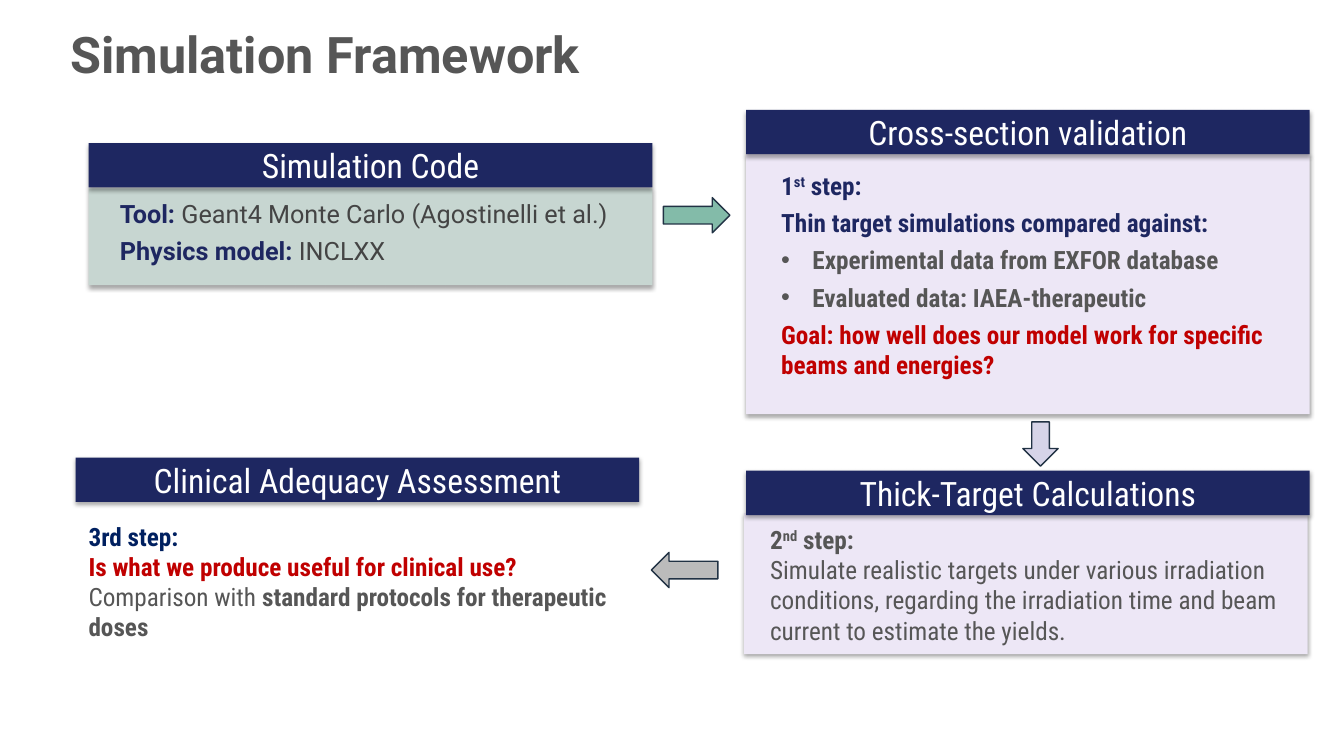
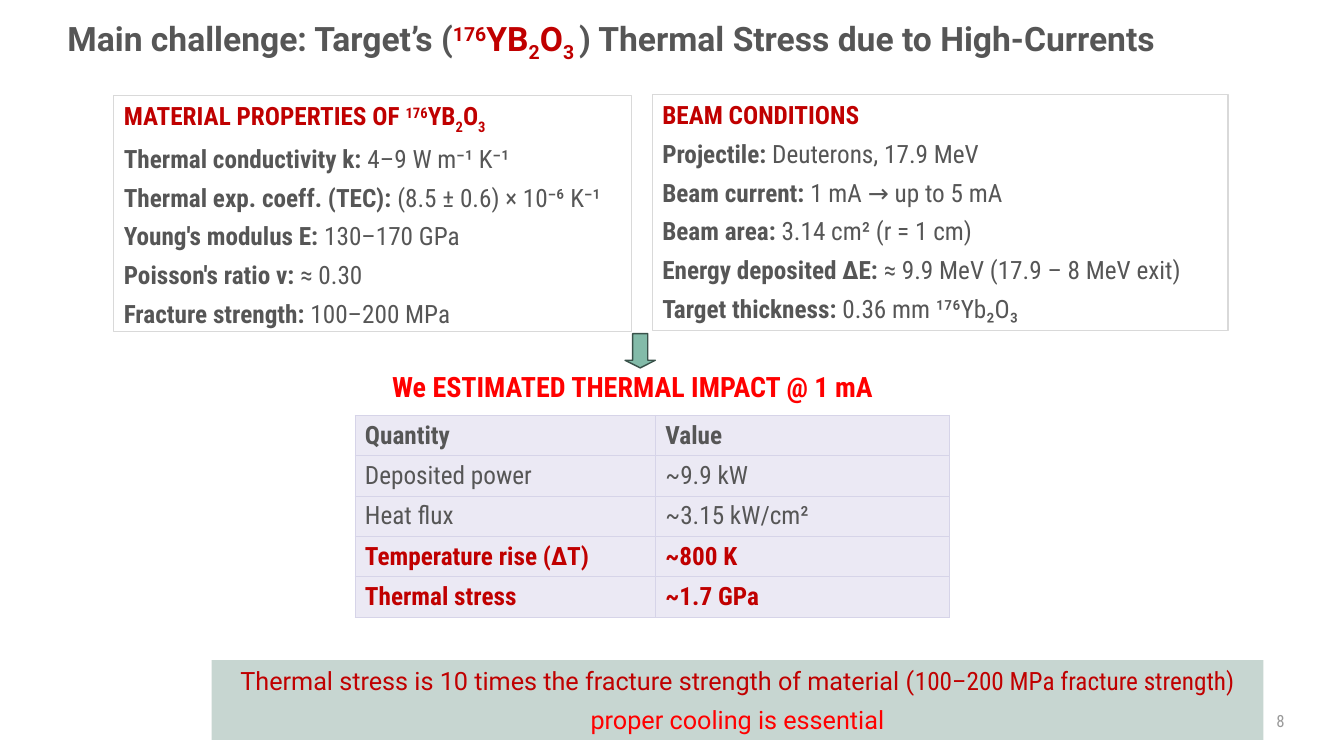
"""Build two slides on a simulation framework and target thermal stress."""
from lxml.etree import SubElement
from pptx import Presentation
from pptx.dml.color import RGBColor
from pptx.enum.shapes import MSO_SHAPE
from pptx.enum.text import MSO_ANCHOR, PP_ALIGN
from pptx.oxml.ns import qn
from pptx.util import Inches, Pt

NAVY, GREY, RED, BRIGHT = "1E2761", "565656", "C00000", "FF0000"
LILAC, SAGE, GREEN, EDGE = "EDE7F6", "C7D6D1", "83BBA9", "D6D4E8"
WIDE, SLIM = "Roboto", "Roboto Condensed"
BOX, RIGHT, DOWN = MSO_SHAPE.RECTANGLE, MSO_SHAPE.RIGHT_ARROW, MSO_SHAPE.DOWN_ARROW
TITLE = {"font": WIDE, "bold": True, "mid": True, "lines": 0.9}
BOLD, PLAIN = {"bold": True}, {"bold": False}
SUP, SUB = {"base": 30000}, {"base": -25000}
rgb = RGBColor.from_string


def draw(slide, place, kind=None, fill=None, line=None, width=1, shade=False, turn=0):
    """Add a shape, or a text box when no kind is given."""
    place = [Inches(n) for n in place]
    if kind is None:
        return slide.shapes.add_textbox(*place)
    shape = slide.shapes.add_shape(kind, *place)
    shape.rotation = turn
    if fill:
        shape.fill.solid()
        shape.fill.fore_color.rgb = rgb(fill)
    else:
        shape.fill.background()
    if line:
        shape.line.color.rgb = rgb(line)
        shape.line.width = Pt(width)
    else:
        shape.line.fill.background()
    shape.shadow.inherit = False
    if shade:
        glow = SubElement(shape._element.spPr.find(qn("a:effectLst")), qn("a:outerShdw"),
                          blurRad=str(Pt(3.1)), dist=str(Pt(1.8)), dir="5400000",
                          algn="t", rotWithShape="0")
        tint = SubElement(glow, qn("a:srgbClr"), val="000000")
        SubElement(tint, qn("a:alpha"), val="35000")
    return shape


def write(frame, paras, align=PP_ALIGN.LEFT, mid=False, before=0, after=0, lines=None, **look):
    """Fill a frame with paragraphs, each a list of strings or (string, format) runs."""
    frame.word_wrap = True
    frame.vertical_anchor = MSO_ANCHOR.MIDDLE if mid else MSO_ANCHOR.TOP
    for i, runs in enumerate(paras):
        para = frame.add_paragraph() if i else frame.paragraphs[0]
        para.alignment = align
        para.space_before = Pt(before if i else 0)
        para.space_after = Pt(after)
        if lines:
            para.line_spacing = lines
        for part in runs:
            text, own = (part, {}) if isinstance(part, str) else part
            form = {"size": 18, "font": SLIM, "color": GREY, "bold": False, "base": 0} | look | own
            if text.startswith("• "):
                text = text[2:]
                props = para._p.get_or_add_pPr()
                props.set("marL", str(Inches(0.31)))
                props.set("indent", str(Inches(-0.31)))
                SubElement(props, qn("a:buFont"), typeface="Arial")
                SubElement(props, qn("a:buChar"), char="•")
            run = para.add_run()
            run.text = text
            run.font.size = Pt(form["size"])
            run.font.name = form["font"]
            run.font.bold = form["bold"]
            run.font.color.rgb = rgb(form["color"])
            if form["base"]:
                run._r.get_or_add_rPr().set("baseline", str(form["base"]))


deck = Presentation()
deck.slide_width, deck.slide_height = Inches(13.33), Inches(7.5)
blank = deck.slide_layouts[6]

slide = deck.slides.add_slide(blank)
title = draw(slide, (0.6, 0.15, 11.95, 0.84))
write(title.text_frame, [["Simulation Framework"]], size=36, **TITLE)

navy, red = {"color": NAVY, "bold": True}, {"color": RED, "bold": True}
cards = [
    ("Simulation Code", 0.88, 1.42, (0.88, 1.87, 5.59, 0.96), SAGE, (1.09, 1.92, 5.34, 0.78),
     [[("Tool: ", navy), "Geant4 Monte Carlo (Agostinelli et al.)"],
      [("Physics model: ", navy), "INCLXX"]],
     {"font": WIDE, "color": "444444", "after": 5}),
    ("Cross-section validation", 7.4, 1.09, (7.4, 1.53, 5.59, 2.58), LILAC,
     (7.65, 1.64, 5.34, 2.57),
     [[("1", navy), ("st", navy | SUP), (" step:", navy)],
      [("Thin target simulations compared against:", navy)],
      ["• Experimental data from EXFOR database"],
      ["• Evaluated data: IAEA-therapeutic"],
      [("Goal: how well does our model work for specific beams and energies?", red)]],
     {"bold": True, "after": 5}),
    ("Thick-Target Calculations", 7.4, 4.67, (7.38, 5.09, 5.59, 1.4), LILAC,
     (7.54, 5.15, 5.34, 1.31),
     [[("2", BOLD), ("nd", BOLD | SUP), (" step:", BOLD)],
      ["Simulate realistic targets under various irradiation conditions, "
       "regarding the irradiation time and beam current to estimate the yields."]], {}),
    ("Clinical Adequacy Assessment", 0.75, 4.54, None, None, (0.78, 5.12, 5.64, 1.62),
     [[("3rd step:", {"color": "002060", "bold": True})],
      [("Is what we produce useful for clinical use?", red)],
      ["Comparison with ", ("standard protocols for therapeutic doses", BOLD)]], {}),
]
for name, left, top, panel, fill, place, paras, look in cards:
    if panel:
        draw(slide, panel, BOX, fill, shade=True)
    head = draw(slide, (left, top, 5.59, 0.44), BOX, NAVY, shade=True)
    write(head.text_frame, [[name]], align=PP_ALIGN.CENTER, mid=True, size=24, color="FFFFFF")
    write(draw(slide, place).text_frame, paras, **look)

for place, fill, turn in [((6.58, 1.96, 0.66, 0.35), GREEN, 0),
                          ((10.1, 4.23, 0.44, 0.35), EDGE, 90),
                          ((6.46, 5.48, 0.66, 0.35), "BBBBBB", 180)]:
    draw(slide, place, RIGHT, fill, "213244", turn=turn)

slide = deck.slides.add_slide(blank)
title = draw(slide, (0.57, 0.05, 11.95, 0.67))
write(title.text_frame,
      [["Main challenge: Target’s (", ("176", red | SUP), ("YB", red), ("2", red | SUB),
        ("O", red), ("3 ", red | SUB), ") Thermal Stress due to High-Currents"]],
      size=24, **TITLE)
number = draw(slide, (9.32, 6.95, 3.52, 0.4))
write(number.text_frame, [["8"]], align=PP_ALIGN.RIGHT, mid=True, size=12, color="9A9A9A")

lists = [
    ((1.13, 0.95, 5.13, 2.34),
     [("MATERIAL PROPERTIES OF ", red), ("176", red | SUP), ("YB", red), ("2", red | SUB),
      ("O", red), ("3", red | SUB)],
     [("Thermal conductivity k: ", "4–9 W m⁻¹ K⁻¹"),
      ("Thermal exp. coeff. (TEC): ", "(8.5 ± 0.6) × 10⁻⁶ K⁻¹"),
      ("Young's modulus E: ", "130–170 GPa"),
      ("Poisson's ratio ν: ", "≈ 0.30"),
      ("Fracture strength: ", "100–200 MPa")]),
    ((6.47, 0.94, 5.71, 2.34),
     [("BEAM CONDITIONS", red)],
     [("Projectile: ", "Deuterons, 17.9 MeV"),
      ("Beam current: ", "1 mA → up to 5 mA"),
      ("Beam area: ", "3.14 cm² (r = 1 cm)"),
      ("Energy deposited ΔE: ", "≈ 9.9 MeV (17.9 – 8 MeV exit)"),
      ("Target thickness: ", "0.36 mm ¹⁷⁶Yb₂O₃")]),
]
for place, head, facts in lists:
    frame = draw(slide, place, BOX, line="D9D9D9", width=0.75).text_frame
    write(frame, [head] + [[(label, BOLD), fact] for label, fact in facts], after=6)

rows = [("Quantity", "Value", BOLD),
        ("Deposited power", "~9.9 kW", PLAIN),
        ("Heat flux", "~3.15 kW/cm²", PLAIN),
        ("Temperature rise (ΔT)", "~800 K", red),
        ("Thermal stress", "~1.7 GPa", red)]
table = slide.shapes.add_table(len(rows), 2, Inches(3.52), Inches(4.12),
                               Inches(5.9), Inches(2)).table
table.columns[0].width, table.columns[1].width = Inches(2.98), Inches(2.92)
for r, (label, value, look) in enumerate(rows):
    for c, text in enumerate((label, value)):
        cell = table.cell(r, c)
        write(cell.text_frame, [[text]], **look)
        cell.vertical_anchor = MSO_ANCHOR.MIDDLE
        props = cell._tc.get_or_add_tcPr()
        for side in ("lnL", "lnR", "lnT", "lnB"):
            rule = SubElement(props, qn("a:" + side), w=str(Pt(0.5)))
            SubElement(SubElement(rule, qn("a:solidFill")), qn("a:srgbClr"), val=EDGE)
        cell.fill.solid()
        cell.fill.fore_color.rgb = rgb("EBE9F4")

label = draw(slide, (3.79, 3.62, 5.71, 0.44))
write(label.text_frame, [["We ESTIMATED THERMAL IMPACT @ 1 mA"]],
      size=20, color=BRIGHT, bold=True)
arrow = draw(slide, (6.2, 3.31, 0.3, 0.34), DOWN, GREEN, "39524A")
arrow.adjustments[1] = 0.25
band = draw(slide, (2.1, 6.55, 10.43, 0.79), BOX, SAGE)
write(band.text_frame,
      [["Thermal stress is 10 times the fracture strength of material (",
        ("100–200 MPa fracture strength)", {"font": SLIM})],
       [("proper cooling is essential", {"color": BRIGHT})]],
      align=PP_ALIGN.CENTER, before=6, font=WIDE, color=RED)

deck.save("out.pptx")
